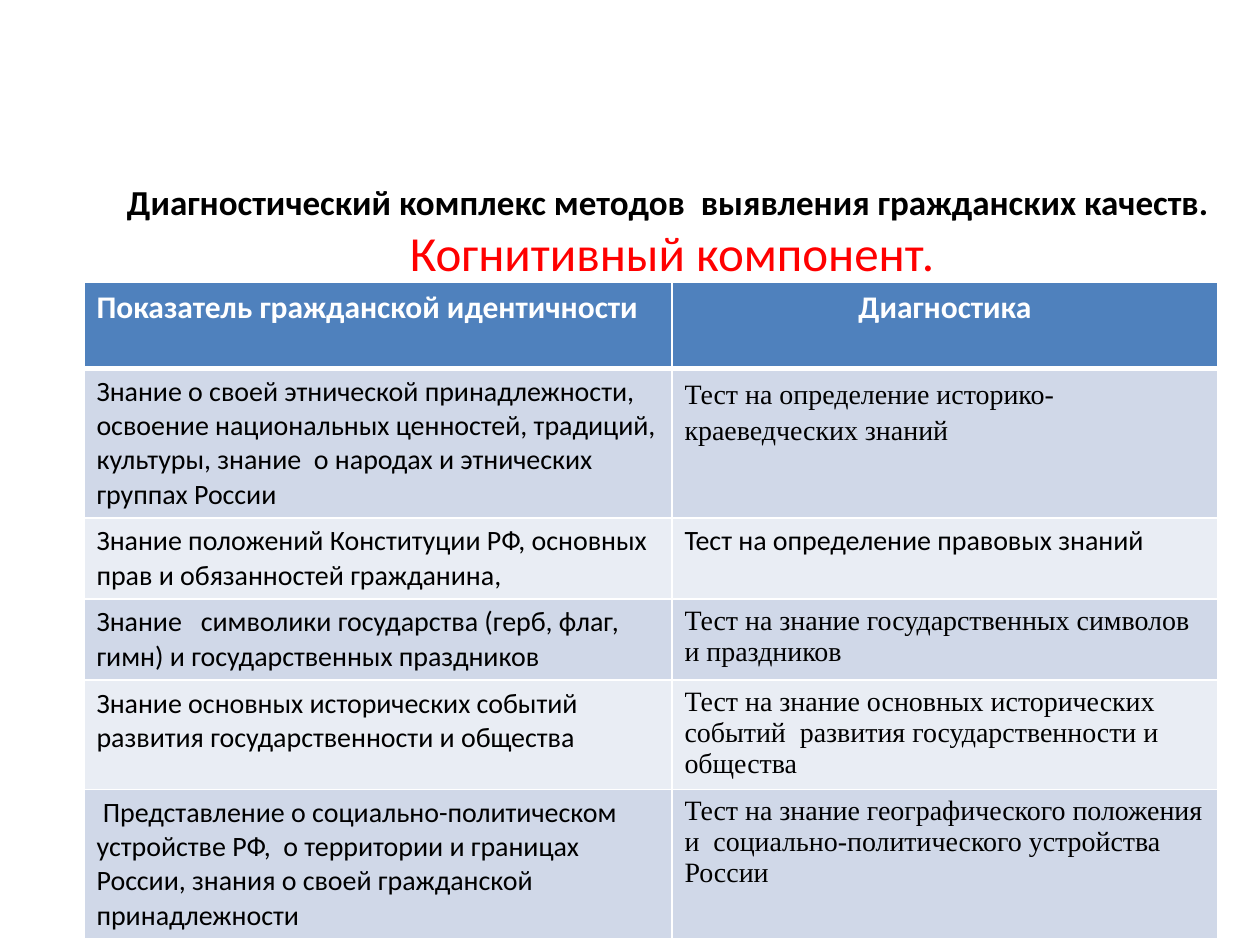
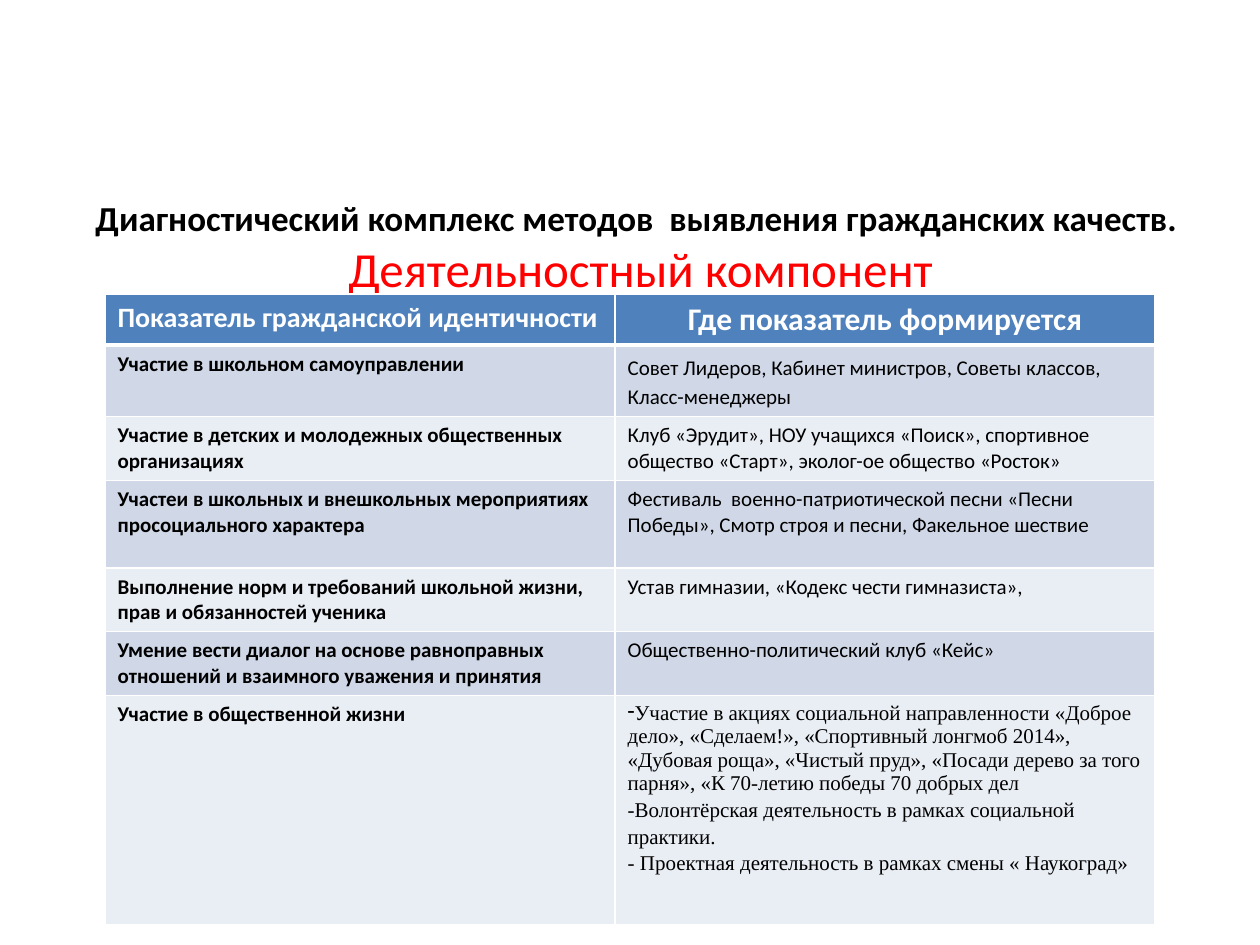
from lxml import etree
from pptx import Presentation
from pptx.dml.color import RGBColor
from pptx.enum.text import MSO_ANCHOR, MSO_AUTO_SIZE, PP_ALIGN
from pptx.oxml.ns import qn
from pptx.util import Pt

CENTER = PP_ALIGN.CENTER
LEFT = PP_ALIGN.LEFT
MIDDLE = MSO_ANCHOR.MIDDLE
NO_AUTOFIT = MSO_AUTO_SIZE.NONE

BLACK = RGBColor(0x00, 0x00, 0x00)
WHITE = RGBColor(0xFF, 0xFF, 0xFF)
RED = RGBColor(0xFF, 0x00, 0x00)
HEADER_BLUE = RGBColor(0x4F, 0x81, 0xBD)
BANDS = (RGBColor(0xD0, 0xD8, 0xE8), RGBColor(0xE9, 0xED, 0xF4))

SANS = "Calibri"
SERIF = "Times New Roman"
HEADING = "Диагностический комплекс методов  выявления гражданских качеств. "

COGNITIVE = {
    "component": "Когнитивный компонент.",
    "title_box": (60, 108, 648, 48),
    "table_at": (48, 161.5),
    "columns": (336, 312),
    "heights": (49, 81.5, 44, 44, 62.5, 85.5),
    "header": (("Показатель гражданской идентичности", 18), ("Диагностика", 18)),
    "body_size": 16,
    "bold_indicators": False,
    "rows": [
        ("Знание о своей этнической принадлежности, освоение национальных ценностей, "
         "традиций, культуры, знание  о народах и этнических группах России",
         SERIF, [("Тест на определение историко-краеведческих знаний", 1.15, None)]),
        ("Знание положений Конституции РФ, основных прав и обязанностей гражданина,",
         SANS, [("Тест на определение правовых знаний", 1, None)]),
        ("Знание   символики государства (герб, флаг, гимн) и государственных праздников",
         SERIF, [("Тест на знание государственных символов и праздников", 1, None)]),
        ("Знание основных исторических событий развития государственности и общества",
         SERIF, [("Тест на знание основных исторических событий  развития "
                  "государственности и общества", 1, None)]),
        (" Представление о социально-политическом устройстве РФ,  о территории и границах "
         "России, знания о своей гражданской принадлежности",
         SERIF, [("Тест на знание географического положения и  социально-политического "
                  "устройства России", 1, None)]),
    ],
}

ACTIVITY = {
    "component": "Деятельностный компонент",
    "title_box": (42, 108, 648, 66),
    "table_at": (60, 168),
    "columns": (291.5, 308.5),
    "heights": (28, 39, 35.5, 50, 35.5, 35.5, 131),
    "header": (("Показатель гражданской идентичности", 16), ("Где показатель формируется", 18)),
    "body_size": 12,
    "bold_indicators": True,
    "rows": [
        ("Участие в школьном самоуправлении",
         SANS, [("Совет Лидеров, Кабинет министров, Советы классов, Класс-менеджеры", 1.15, None)]),
        ("Участие в детских и молодежных общественных организациях",
         SANS, [("Клуб «Эрудит», НОУ учащихся «Поиск», спортивное общество «Старт», "
                 "эколог-ое общество «Росток»", 1, None)]),
        ("Участеи в школьных и внешкольных мероприятиях просоциального характера",
         SANS, [("Фестиваль  военно-патриотической песни «Песни Победы», "
                 "Смотр строя и песни, Факельное шествие", 1, None)]),
        ("Выполнение норм и требований школьной жизни, прав и обязанностей ученика",
         SANS, [("Устав гимназии, «Кодекс чести гимназиста»,", 1, None)]),
        ("Умение вести диалог на основе равноправных отношений и взаимного уважения и принятия",
         SANS, [("Общественно-политический клуб «Кейс»", 1, None)]),
        ("Участие в общественной жизни",
         SERIF, [("Участие в акциях социальной направленности «Доброе дело», «Сделаем!», "
                  "«Спортивный лонгмоб 2014», «Дубовая роща», «Чистый пруд», «Посади дерево "
                  "за того парня», «К 70-летию победы 70 добрых дел", 1, "-"),
                 ("-Волонтёрская деятельность в рамках социальной практики.", 1.15, None),
                 ("- Проектная деятельность в рамках смены « Наукоград»", 1.15, None)]),
    ],
}


def style_font(font, size, color, bold=False, name=SANS):
    font.size = Pt(size)
    font.color.rgb = color
    font.bold = bold
    font.name = name


def add_title(page, component, box):
    title = page.shapes.title
    title.left, title.top, title.width, title.height = map(Pt, box)
    frame = title.text_frame
    frame.auto_size = NO_AUTOFIT
    frame.word_wrap = True
    frame.vertical_anchor = MIDDLE
    para = frame.paragraphs[0]
    para.alignment = CENTER
    heading = para.add_run()
    heading.text = HEADING
    style_font(heading.font, 20, BLACK, True)
    para.add_line_break()
    span = para.add_run()
    span.text = component
    style_font(span.font, 28, RED)


def add_borders(cell, bottom, top):
    properties = cell._tc.get_or_add_tcPr()
    for side, width in (("lnL", 1), ("lnR", 1), ("lnT", top), ("lnB", bottom)):
        line = etree.SubElement(properties, qn(f"a:{side}"), w=str(Pt(width)))
        fill = etree.SubElement(line, qn("a:solidFill"))
        etree.SubElement(fill, qn("a:srgbClr"), val=str(WHITE))


def add_bullet(para, mark):
    properties = para._p.get_or_add_pPr()
    properties.set("marL", "0")
    properties.set("indent", "0")
    etree.SubElement(properties, qn("a:buChar"), char=mark)


def fill_cell(cell, fill, paragraphs, size, color, bold, name, alignment=LEFT):
    cell.fill.solid()
    cell.fill.fore_color.rgb = fill
    frame = cell.text_frame
    frame.text = "\n".join(text for text, spacing, mark in paragraphs)
    for para, (text, spacing, mark) in zip(frame.paragraphs, paragraphs):
        para.alignment = alignment
        if spacing != 1:
            para.line_spacing = spacing
        if mark:
            add_bullet(para, mark)
        for span in para.runs:
            style_font(span.font, size, color, bold, name)


def add_indicator_table(page, content):
    columns, heights = content["columns"], content["heights"]
    left, top = content["table_at"]
    table = page.shapes.add_table(
        len(heights), len(columns), Pt(left), Pt(top), Pt(sum(columns)), Pt(sum(heights))
    ).table
    for column, width in zip(table.columns, columns):
        column.width = Pt(width)
    for index, (row, height) in enumerate(zip(table.rows, heights)):
        row.height = Pt(height)
        for cell in row.cells:
            add_borders(cell, 3 if index == 0 else 1, 3 if index == 1 else 1)

    for cell, (text, size), alignment in zip(table.rows[0].cells, content["header"], (LEFT, CENTER)):
        fill_cell(cell, HEADER_BLUE, [(text, 1, None)], size, WHITE, True, SANS, alignment)

    size = content["body_size"]
    for index, (indicator, font_name, details) in enumerate(content["rows"]):
        band = BANDS[index % 2]
        indicator_cell, detail_cell = table.rows[index + 1].cells
        fill_cell(indicator_cell, band, [(indicator, 1, None)], size, BLACK,
                  content["bold_indicators"], SANS)
        fill_cell(detail_cell, band, details, size, BLACK, False, font_name)


def main():
    deck = Presentation()
    deck.slide_width, deck.slide_height = Pt(720), Pt(540)
    title_only = deck.slide_layouts[5]
    for content in (COGNITIVE, ACTIVITY):
        page = deck.slides.add_slide(title_only)
        add_title(page, content["component"], content["title_box"])
        add_indicator_table(page, content)
    deck.save("out.pptx")


if __name__ == "__main__":
    main()
